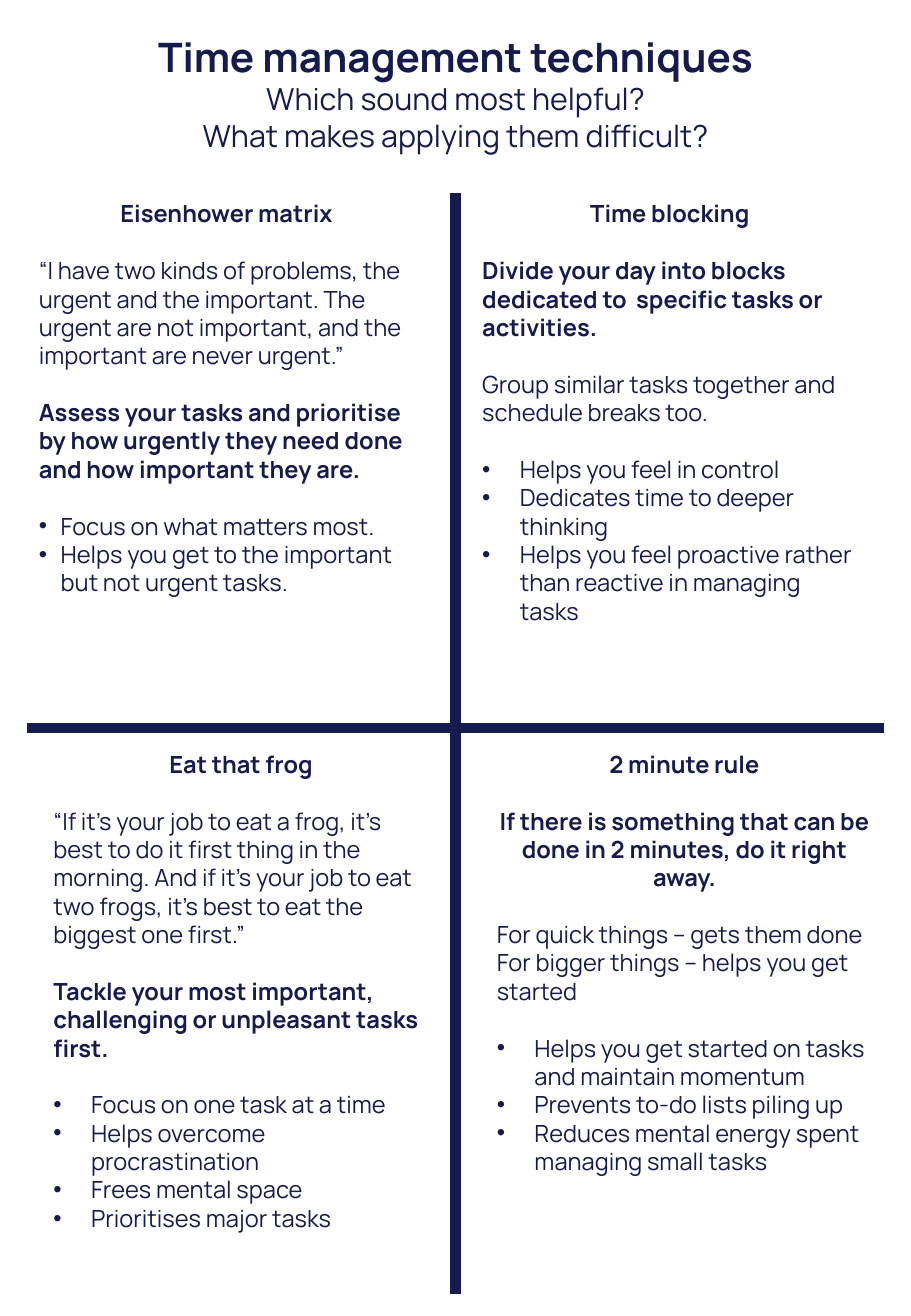
"""Build the one-page overview of four time management techniques."""
from dataclasses import dataclass

from lxml.etree import SubElement
from pptx import Presentation
from pptx.dml.color import RGBColor
from pptx.enum.shapes import MSO_CONNECTOR
from pptx.enum.text import MSO_ANCHOR, MSO_AUTO_SIZE, PP_ALIGN
from pptx.oxml.ns import qn
from pptx.util import Inches, Pt


@dataclass(frozen=True)
class Theme:
    font: str = "Manrope"
    ink: RGBColor = RGBColor(0x16, 0x1B, 0x4E)
    title_size: float = 24
    subtitle_size: float = 18
    body_size: float = 14
    block_gap: float = 16.8
    rule_width: float = 6


@dataclass(frozen=True)
class Grid:
    slide_width: float = 7.5
    slide_height: float = 10.83
    left: float = 0.22
    top: float = 1.59
    column_step: float = 3.65
    row_step: float = 4.53
    row_shift: float = 0.12
    cell_width: float = 3.29
    cell_height: float = 4.11


@dataclass(frozen=True)
class Block:
    lines: tuple[str, ...]
    bold: bool = False
    centred: bool = False
    bullet_indent: float = 0


@dataclass(frozen=True)
class Technique:
    column: int
    row: int
    blocks: tuple[Block, ...]


@dataclass(frozen=True)
class Rule:
    start: tuple[float, float]
    end: tuple[float, float]


THEME = Theme()
GRID = Grid()
WIDE_INDENT = 0.31

TECHNIQUES = (
    Technique(0, 0, (
        Block(("Eisenhower matrix",), bold=True, centred=True),
        Block(("“I have two kinds of problems, the urgent and the important. The urgent are "
               "not important, and the important are never urgent.”",)),
        Block(("Assess your tasks and prioritise by how urgently they need done and how "
               "important they are.",), bold=True),
        Block(("Focus on what matters most.",
               "Helps you get to the important but not urgent tasks."), bullet_indent=0.18),
    )),
    Technique(1, 0, (
        Block(("Time blocking",), bold=True, centred=True),
        Block(("Divide your day into blocks dedicated to  specific tasks or activities.",),
              bold=True),
        Block(("Group similar tasks together and schedule breaks too.",)),
        Block(("Helps you feel in control",
               "Dedicates time to deeper thinking",
               "Helps you feel proactive rather than reactive in managing tasks"),
              bullet_indent=WIDE_INDENT),
    )),
    Technique(0, 1, (
        Block(("Eat that frog",), bold=True, centred=True),
        Block(("“If it’s your job to eat a frog, it’s best to do it first thing in the morning. "
               "And if it’s your job to eat two frogs, it’s best to eat the biggest one first.”",)),
        Block(("Tackle your most important, challenging or unpleasant tasks first.",), bold=True),
        Block(("Focus on one task at a time",
               "Helps overcome procrastination",
               "Frees mental space",
               "Prioritises major tasks"), bullet_indent=WIDE_INDENT),
    )),
    Technique(1, 1, (
        Block(("2 minute rule",), bold=True, centred=True),
        Block(("If there is something that can be done in 2 minutes, do it right away.",),
              bold=True, centred=True),
        Block(("For quick things – gets them done",
               "For bigger things – helps you get started")),
        Block(("Helps you get started on tasks and maintain momentum",
               "Prevents to-do lists piling up",
               "Reduces mental energy spent managing small tasks"),
              bullet_indent=WIDE_INDENT),
    )),
)

RULES = (
    Rule((GRID.slide_width / 2, GRID.top), (GRID.slide_width / 2, 10.65)),
    Rule((GRID.slide_width - GRID.left, 5.99), (GRID.left, 5.99)),
)


def place(shape, left: float, top: float, width: float, height: float):
    """Move a placeholder, reset its frame and return its text frame."""
    shape.left, shape.top = Inches(left), Inches(top)
    shape.width, shape.height = Inches(width), Inches(height)
    frame = shape.text_frame
    frame.word_wrap = True
    frame.auto_size = MSO_AUTO_SIZE.SHAPE_TO_FIT_TEXT
    frame.vertical_anchor = MSO_ANCHOR.TOP
    return frame


def write(frame, text: str, *, first: bool = False, size: float = THEME.body_size,
          bold: bool = False, centred: bool = False, gap: float = 0,
          bullet_indent: float = 0) -> None:
    """Write one formatted paragraph into a text frame."""
    paragraph = frame.paragraphs[0] if first else frame.add_paragraph()
    properties = paragraph._p.get_or_add_pPr()
    properties.set("marL", str(Inches(bullet_indent)))
    properties.set("indent", str(-Inches(bullet_indent)))
    if bullet_indent:
        SubElement(properties, qn("a:buChar")).set("char", "•")
    else:
        SubElement(properties, qn("a:buNone"))
    paragraph.alignment = PP_ALIGN.CENTER if centred else PP_ALIGN.LEFT
    paragraph.space_before = Pt(gap)
    run = paragraph.add_run()
    run.text = text
    run.font.name = THEME.font
    run.font.size = Pt(size)
    run.font.bold = bold
    run.font.color.rgb = THEME.ink


def draw_heading(shape) -> None:
    """Fill the title placeholder with the title and its two questions."""
    frame = place(shape, 0, 0.21, GRID.slide_width, 1.11)
    write(frame, "Time management techniques", first=True, size=THEME.title_size,
          bold=True, centred=True)
    for question in ("Which sound most helpful?", "What makes applying them difficult?"):
        write(frame, question, size=THEME.subtitle_size, centred=True)


def draw_technique(shape, technique: Technique) -> None:
    """Fill a body placeholder with one technique in its grid cell."""
    left = GRID.left + technique.column * GRID.column_step + technique.row * GRID.row_shift
    top = GRID.top + technique.row * GRID.row_step
    frame = place(shape, left, top, GRID.cell_width, GRID.cell_height)
    for block_index, block in enumerate(technique.blocks):
        for line_index, line in enumerate(block.lines):
            opens_block = block_index > 0 and line_index == 0
            write(frame, line, first=block_index == line_index == 0, bold=block.bold,
                  centred=block.centred, gap=THEME.block_gap if opens_block else 0,
                  bullet_indent=block.bullet_indent)


def draw_rule(slide, rule: Rule) -> None:
    """Draw one thick dividing line."""
    ends = [Inches(length) for length in (*rule.start, *rule.end)]
    connector = slide.shapes.add_connector(MSO_CONNECTOR.STRAIGHT, *ends)
    connector.line.color.rgb = THEME.ink
    connector.line.width = Pt(THEME.rule_width)
    SubElement(connector._element.spPr, qn("a:effectLst"))


def main() -> None:
    """Build and save the presentation."""
    presentation = Presentation()
    presentation.slide_width = Inches(GRID.slide_width)
    presentation.slide_height = Inches(GRID.slide_height)
    comparison_layout = presentation.slide_layouts.get_by_name("Comparison")
    slide = presentation.slides.add_slide(comparison_layout)
    heading, *bodies = slide.placeholders
    draw_heading(heading)
    for body, technique in zip(bodies, TECHNIQUES):
        draw_technique(body, technique)
    for rule in RULES:
        draw_rule(slide, rule)
    presentation.save("out.pptx")


if __name__ == "__main__":
    main()
